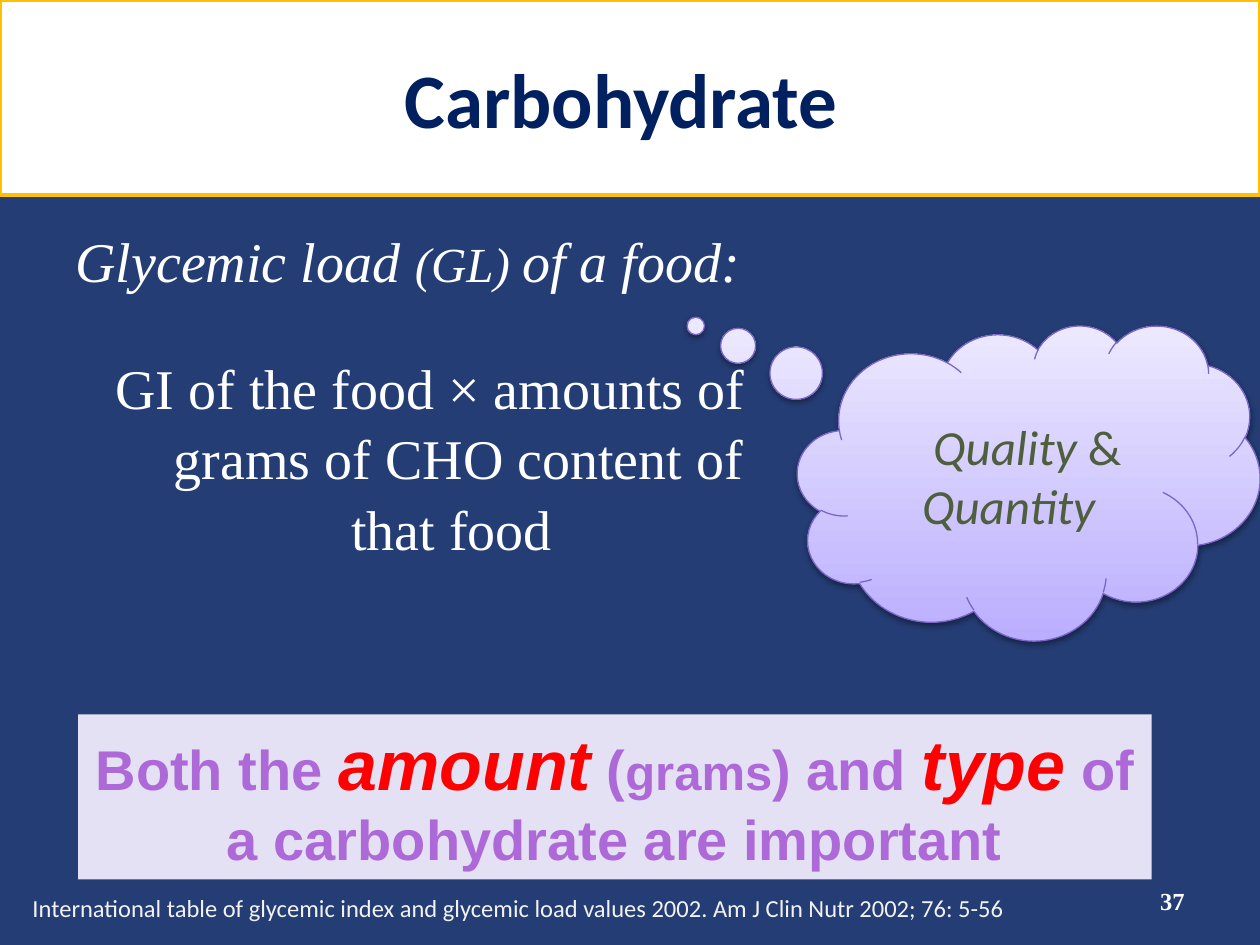
from lxml import etree
from pptx import Presentation
from pptx.dml.color import RGBColor
from pptx.enum.shapes import MSO_SHAPE as Shape
from pptx.enum.text import MSO_ANCHOR as Anchor, PP_ALIGN as Align
from pptx.oxml import parse_xml
from pptx.oxml.ns import nsdecls, qn
from pptx.util import Inches, Pt

NAVY = RGBColor(0x25, 0x3D, 0x75)
TITLE_BLUE = RGBColor(0x00, 0x20, 0x60)
GOLD = RGBColor(0xFF, 0xC0, 0x00)
WHITE = RGBColor(0xFF, 0xFF, 0xFF)
OFF_WHITE = RGBColor(0xF2, 0xF2, 0xF2)
LAVENDER = RGBColor(0xE5, 0xE1, 0xF4)
PURPLE = RGBColor(0xAE, 0x69, 0xD8)
RED = RGBColor(0xFF, 0x00, 0x00)
OLIVE = RGBColor(0x4F, 0x5E, 0x3C)
CLOUD_DARK = RGBColor(0xBB, 0xAE, 0xFF)
CLOUD_LIGHT = RGBColor(0xEC, 0xE9, 0xFF)
CLOUD_LINE = RGBColor(0x7A, 0x66, 0xC7)

SERIF, SANS, HEAVY = "Times New Roman", "Calibri", "Arial"


def add_run(paragraph, text, font=SANS, size=14, color=WHITE, bold=False, italic=False):
    run = paragraph.add_run()
    run.text = text
    run.font.name = font
    run.font.size = Pt(size)
    run.font.color.rgb = color
    run.font.bold = bold
    run.font.italic = italic


def first_paragraph(shape, align=Align.LEFT, anchor=Anchor.TOP):
    """Prepare the text frame and return its first paragraph."""
    frame = shape.text_frame
    frame.word_wrap = True
    frame.vertical_anchor = anchor
    paragraph = frame.paragraphs[0]
    paragraph.alignment = align
    return paragraph


def add_text_box(slide, left, top, width, height, **layout):
    box = slide.shapes.add_textbox(Inches(left), Inches(top), Inches(width), Inches(height))
    return box, first_paragraph(box, **layout)


def add_panel(slide, left, top, width, height, fill, line=None, **layout):
    panel = slide.shapes.add_shape(
        Shape.RECTANGLE, Inches(left), Inches(top), Inches(width), Inches(height))
    panel.shadow.inherit = False
    panel.fill.solid()
    panel.fill.fore_color.rgb = fill
    if line is None:
        panel.line.fill.background()
    else:
        panel.line.color.rgb = line
        panel.line.width = Pt(2)
    return first_paragraph(panel, **layout)


def add_shadow(shape):
    shape.shadow.inherit = False
    effects = shape._element.spPr.find(qn("a:effectLst"))
    effects.append(parse_xml(
        f'<a:outerShdw {nsdecls("a")} blurRad="{Pt(3.1)}" dist="{Pt(1.6)}" '
        'dir="5400000" rotWithShape="0"/>'))
    color = etree.SubElement(effects[0], qn("a:srgbClr"), val="000000")
    etree.SubElement(color, qn("a:alpha"), val="38000")


def add_thought_cloud(slide):
    cloud = slide.shapes.add_shape(
        Shape.CLOUD_CALLOUT, Inches(6.33), Inches(2.58), Inches(3.67), Inches(2.5))
    cloud.adjustments[0] = -0.72
    cloud.adjustments[1] = -0.497
    cloud.fill.gradient()
    cloud.fill.gradient_angle = 90
    for stop, color in zip(cloud.fill.gradient_stops, (CLOUD_DARK, CLOUD_LIGHT)):
        stop.color.rgb = color
    cloud.line.color.rgb = CLOUD_LINE
    cloud.line.width = Pt(0.75)
    add_shadow(cloud)

    _, paragraph = add_text_box(slide, 7.22, 3.26, 2.03, 1.04)
    for text, italic in ((" Quality ", True), ("& ", False), ("Quantity", True)):
        add_run(paragraph, text, size=28, color=OLIVE, italic=italic)


def add_definition(slide):
    box, heading = add_text_box(slide, 0.5, 1.75, 5.68, 4.95)
    heading.space_before = Pt(6.4)
    for text, size in (("Glycemic load ", 32), ("(GL) ", 28), ("of a food:", 32)):
        add_run(heading, text, font=SERIF, size=size, italic=True)

    formula = box.text_frame.add_paragraph()
    formula.alignment = Align.CENTER
    formula.space_before = Pt(32)
    formula.line_spacing = 1.05
    properties = formula._p.get_or_add_pPr()
    properties.set("marL", str(Inches(0.6)))
    properties.set("indent", str(Inches(-0.45)))
    add_run(formula, "GI of the food × amounts of grams of CHO content of that food ",
            font=SERIF, size=32)


def add_key_message(slide):
    paragraph = add_panel(slide, 0.62, 5.67, 8.52, 1.31, LAVENDER, align=Align.CENTER)
    plain = dict(font=HEAVY, size=32, color=PURPLE, bold=True)
    small = plain | dict(size=28)
    strong = plain | dict(size=40, color=RED, italic=True)
    for text, style in (
        ("Both the ", plain), ("amount", strong), (" (", plain), ("grams", small),
        (") and ", plain), ("type", strong), (" of a carbohydrate are important", plain),
    ):
        add_run(paragraph, text, **style)


def main():
    presentation = Presentation()
    presentation.slide_width = Inches(10)
    presentation.slide_height = Inches(7.5)
    slide = presentation.slides.add_slide(presentation.slide_layouts[6])
    slide.background.fill.solid()
    slide.background.fill.fore_color.rgb = NAVY

    # Title band
    title = add_panel(slide, 0, 0, 10, 1.55, WHITE, line=GOLD,
                      align=Align.CENTER, anchor=Anchor.MIDDLE)
    add_run(title, "Carbohydrate ", size=44, color=TITLE_BLUE, bold=True)

    # Body
    add_definition(slide)
    add_key_message(slide)
    add_thought_cloud(slide)

    # Page number and reference
    _, number = add_text_box(slide, 7.17, 6.95, 2.33, 0.4,
                             align=Align.RIGHT, anchor=Anchor.MIDDLE)
    add_run(number, "37", font=SERIF, bold=True)
    _, reference = add_text_box(slide, 0.16, 7.04, 8.7, 0.34)
    add_run(reference, "International table of glycemic index and glycemic load values 2002. "
            "Am J Clin Nutr 2002; 76: 5-56", color=OFF_WHITE)

    presentation.save("out.pptx")


if __name__ == "__main__":
    main()
